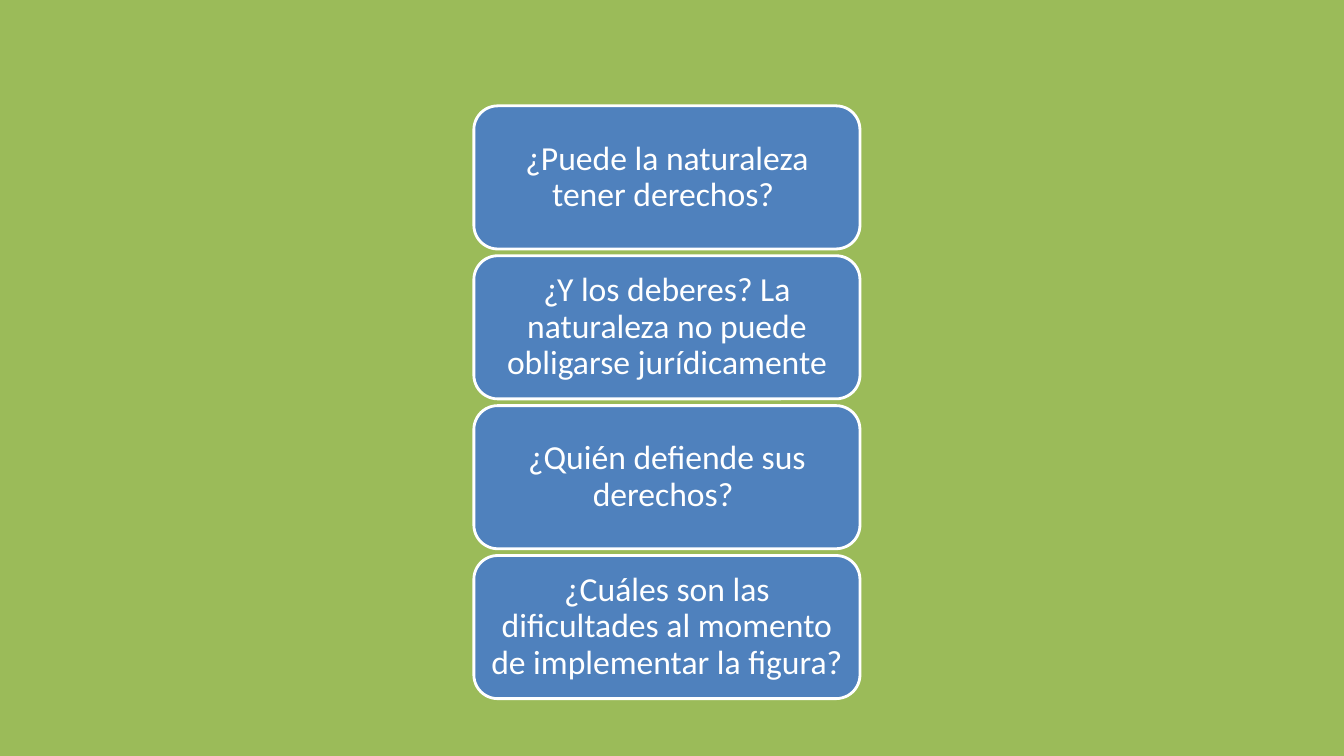
from pptx import Presentation
from pptx.dml.color import RGBColor
from pptx.enum import shapes, text
from pptx.util import Inches, Pt

ASKS = [
    "¿Puede la naturaleza tener derechos? ",
    "¿Y los deberes? La naturaleza no puede obligarse jurídicamente",
    "¿Quién defiende sus derechos? ",
    "¿Cuáles son las dificultades al momento de implementar la figura?",
]

GREEN = RGBColor(0x9B, 0xBB, 0x59)
BLUE = RGBColor(0x4F, 0x81, 0xBD)
WHITE = RGBColor(0xFF, 0xFF, 0xFF)

WIDE, HIGH = 13.33, 7.5
BOX_W, BOX_H = 3.83, 1.42
TOP, STEP = 1.05, 1.487
LEFT = 4.7

FRAME = {
    "word_wrap": True,
    "vertical_anchor": text.MSO_ANCHOR.MIDDLE,
    "margin_left": Inches(0.09),
    "margin_right": Inches(0.09),
    "margin_top": Inches(0.09),
    "margin_bottom": Inches(0.09),
}
PARA = {"alignment": text.PP_ALIGN.CENTER, "line_spacing": 0.9, "space_after": Pt(8.4)}
FONT = {"name": "Calibri", "size": Pt(24)}


def put(item, style):
    for key, val in style.items():
        setattr(item, key, val)


def add_box(slide, ask, top):
    box = slide.shapes.add_shape(
        shapes.MSO_SHAPE.ROUNDED_RECTANGLE,
        Inches(LEFT), Inches(top), Inches(BOX_W), Inches(BOX_H))
    box.shadow.inherit = False
    box.fill.solid()
    box.fill.fore_color.rgb = BLUE
    box.line.color.rgb = WHITE
    box.line.width = Pt(2)
    put(box.text_frame, FRAME)
    para = box.text_frame.paragraphs[0]
    put(para, PARA)
    run = para.add_run()
    run.text = ask
    put(run.font, FONT)
    run.font.color.rgb = WHITE


def main():
    deck = Presentation()
    deck.slide_width, deck.slide_height = Inches(WIDE), Inches(HIGH)
    slide = deck.slides.add_slide(deck.slide_layouts[6])
    slide.background.fill.solid()
    slide.background.fill.fore_color.rgb = GREEN
    for row, ask in enumerate(ASKS):
        add_box(slide, ask, TOP + row * STEP)
    deck.save("out.pptx")


if __name__ == "__main__":
    main()
